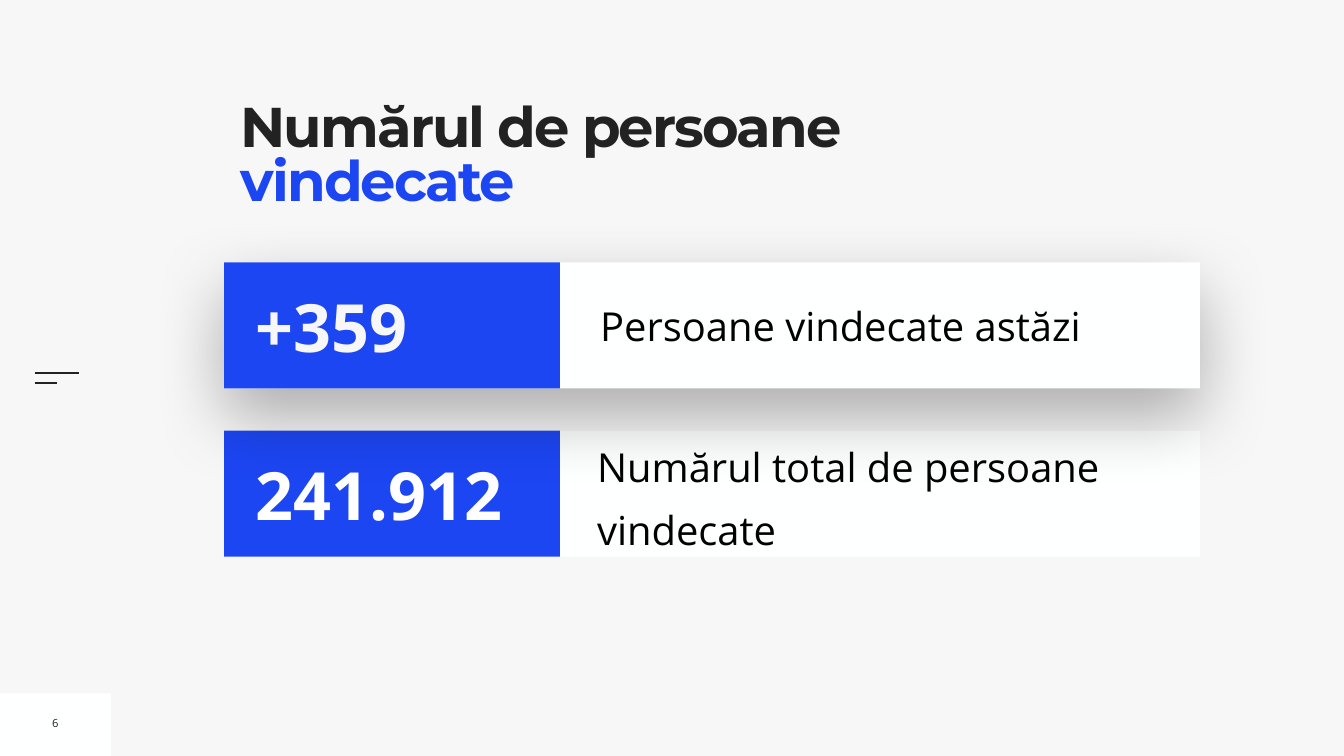
from dataclasses import dataclass

from lxml.etree import SubElement
from pptx import Presentation
from pptx.dml.color import RGBColor
from pptx.enum.shapes import MSO_CONNECTOR as Connector, MSO_SHAPE as Shape
from pptx.enum.text import MSO_ANCHOR as Anchor, PP_ALIGN as Align
from pptx.oxml.ns import qn
from pptx.util import Cm, Pt


@dataclass(frozen=True)
class Theme:
    background: str = "F7F7F7"
    panel: str = "FEFFFF"
    accent: str = "1D46F3"
    ink: str = "222222"
    label: str = "000000"
    white: str = "FFFFFF"
    heading_font: str = "Montserrat"
    body_font: str = "Open Sans"
    title_size: int = 80
    number_size: int = 95
    label_size: int = 57
    page_size: int = 16


THEME = Theme()
CARD_LEFT, CARD_WIDTH, CARD_HEIGHT = 11.3, 49.18, 6.35
NUMBER_WIDTH = 16.92
INSET = 0.25


def color(value):
    return RGBColor.from_string(value)


def add_panel(page, left, top, width, height, fill):
    panel = page.shapes.add_shape(
        Shape.RECTANGLE, Cm(left), Cm(top), Cm(width), Cm(height))
    panel.shadow.inherit = False
    panel.fill.solid()
    panel.fill.fore_color.rgb = color(fill)
    panel.line.fill.background()
    return panel


def add_soft_shadow(panel):
    effects = panel._element.spPr.find(qn("a:effectLst"))
    shadow = SubElement(
        effects, qn("a:outerShdw"), blurRad=str(Pt(100)), dist=str(Pt(40)),
        dir="5400000", rotWithShape="0")
    tint = SubElement(shadow, qn("a:srgbClr"), val="000000")
    SubElement(tint, qn("a:alpha"), val="30000")


def add_text(page, left, top, width, height, text, size, fill,
             bold=False, inset=INSET, anchor=Anchor.MIDDLE, wrap=True):
    box = page.shapes.add_textbox(Cm(left), Cm(top), Cm(width), Cm(height))
    frame = box.text_frame
    frame.word_wrap = wrap
    frame.vertical_anchor = anchor
    frame.margin_left = frame.margin_right = Cm(inset)
    frame.margin_top = frame.margin_bottom = Cm(inset)
    para = frame.paragraphs[0]
    para.add_run().text = text
    para.font.name = THEME.body_font
    para.font.size = Pt(size)
    para.font.bold = bold
    para.font.color.rgb = color(fill)
    return para


def add_title(page):
    para = add_text(page, 12.12, 5.26, 33.05, 6.93, "Numărul de persoane ",
                    THEME.title_size, THEME.ink, bold=True, inset=0,
                    anchor=Anchor.TOP)
    para.line_spacing = 0.8
    para.font.name = THEME.heading_font
    accent = para.add_run()
    accent.text = "vindecate"
    accent.font.color.rgb = color(THEME.accent)
    for span in para.runs:
        span.font._element.set("spc", "-270")


def add_rule(page, left, top, length):
    rule = page.shapes.add_connector(
        Connector.STRAIGHT, Cm(left), Cm(top), Cm(left + length), Cm(top))
    rule.line.color.rgb = color(THEME.ink)
    rule.line.width = Pt(3)
    SubElement(rule._element.spPr, qn("a:effectLst"))


def add_card(page, top, number, number_color, label, label_box, label_inset):
    panel = add_panel(page, CARD_LEFT, top, CARD_WIDTH, CARD_HEIGHT, THEME.panel)
    label_para = add_text(page, *label_box, label, THEME.label_size,
                          THEME.label, inset=label_inset)
    add_panel(page, CARD_LEFT, top, NUMBER_WIDTH, CARD_HEIGHT, THEME.accent)
    add_text(page, CARD_LEFT + 1.35, top + 0.89, 15.32, 4.57, number,
             THEME.number_size, number_color, bold=True)
    return panel, label_para


def main():
    deck = Presentation()
    deck.slide_width, deck.slide_height = Cm(67.74), Cm(38.1)
    page = deck.slides.add_slide(deck.slide_layouts[6])
    page.background.fill.solid()
    page.background.fill.fore_color.rgb = color(THEME.background)

    add_panel(page, 0, 34.95, 5.59, 3.15, THEME.panel)
    add_rule(page, 1.75, 18.82, 2.24)
    add_rule(page, 1.75, 19.28, 1.12)
    add_title(page)
    page_number = add_text(page, 2.36, 35.79, 0.86, 1.3, "6",
                           THEME.page_size, THEME.ink, wrap=False)
    page_number.alignment = Align.CENTER

    _, total_label = add_card(
        page, 21.7, "241.912", THEME.white, "Numărul total de persoane vindecate",
        (30.1, 21.74, 30.35, 5.99), 0)
    total_label.line_spacing = 1.3
    total_label.space_before = Pt(20)

    today_panel, _ = add_card(
        page, 13.23, "+359", THEME.background, "Persoane vindecate astăzi",
        (30, 14.91, 29.87, 2.95), INSET)
    add_soft_shadow(today_panel)

    deck.save("out.pptx")


if __name__ == "__main__":
    main()
